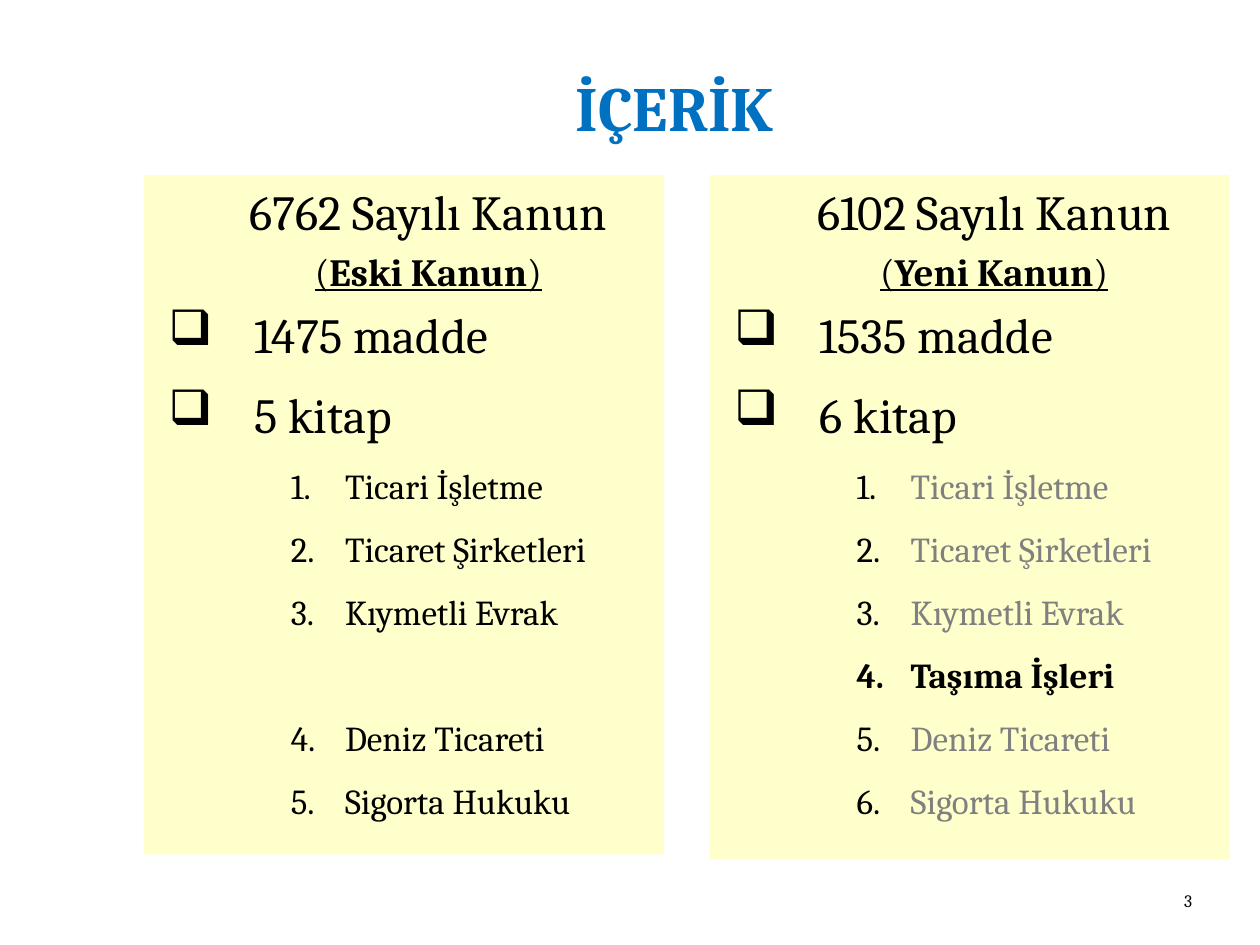
from pptx import Presentation
from pptx.dml.color import RGBColor
from pptx.enum.shapes import MSO_SHAPE as Shape
from pptx.enum.text import MSO_ANCHOR as Anchor, PP_ALIGN as Align
from pptx.oxml import parse_xml
from pptx.oxml.ns import nsdecls
from pptx.util import Inches, Pt

FONT = "Cambria"
COLORS = {"title": "0070C0", "panel": "FFFFCC", "text": "000000", "muted": "808080"}
TITLE = "İÇERİK"
PAGE_NUMBER = "3"
LAWS = [
    {
        "name": "6762 Sayılı Kanun", "status": "Eski Kanun",
        "facts": ["1475 madde", "5 kitap"],
        "books": ["Ticari İşletme", "Ticaret Şirketleri", "Kıymetli Evrak",
                  "Deniz Ticareti", "Sigorta Hukuku"],
        "book_color": "text", "gap_before": "Deniz Ticareti", "height": 5.39,
    },
    {
        "name": "6102 Sayılı Kanun", "status": "Yeni Kanun",
        "facts": ["1535 madde", "6 kitap"],
        "books": ["Ticari İşletme", "Ticaret Şirketleri", "Kıymetli Evrak",
                  "Taşıma İşleri", "Deniz Ticareti", "Sigorta Hukuku"],
        "book_color": "muted", "new_book": "Taşıma İşleri", "height": 5.43,
    },
]
LEFT, TOP, WIDTH, PITCH = 1.14, 1.39, 4.13, 4.49
BOOK_GAP = 36

HEADING = {"margin": 0.38, "indent": 0.01, "align": Align.CENTER}
FACT = {"margin": 0.78, "indent": -0.68, "level": 1, "before": 6, "after": 6,
        "bullet": '<a:buChar {} char="❑"/>'}
BOOK = {"margin": 1.5, "indent": -0.43, "level": 2, "before": 6, "after": 6,
        "bullet": '<a:buAutoNum {} type="arabicPeriod"/>'}


def rgb(name):
    return RGBColor.from_string(COLORS[name])


def add_run(paragraph, text, size, color="text", **styles):
    run = paragraph.add_run()
    run.text = text
    for key, value in {"name": FONT, "size": Pt(size), **styles}.items():
        setattr(run.font, key, value)
    run.font.color.rgb = rgb(color)


def format_paragraph(paragraph, margin, indent, align=Align.LEFT, level=0,
                     before=0, after=0, bullet=None):
    properties = paragraph._p.get_or_add_pPr()
    properties.set("marL", str(Inches(margin)))
    properties.set("indent", str(Inches(indent)))
    if bullet:
        ns = nsdecls("a")
        properties.append(parse_xml(
            f'<a:buClr {ns}><a:srgbClr val="{COLORS["text"]}"/></a:buClr>'))
        properties.append(parse_xml(bullet.format(ns)))
    formats = {"alignment": align, "level": level,
               "space_before": Pt(before), "space_after": Pt(after)}
    for key, value in formats.items():
        setattr(paragraph, key, value)


def add_law(slide, law, left):
    panel = slide.shapes.add_shape(Shape.RECTANGLE, Inches(left), Inches(TOP),
                                   Inches(WIDTH), Inches(law["height"]))
    panel.shadow.inherit = False
    panel.fill.solid()
    panel.fill.fore_color.rgb = rgb("panel")
    panel.line.fill.background()
    frame = panel.text_frame
    frame.word_wrap = True
    frame.vertical_anchor = Anchor.TOP

    name = frame.paragraphs[0]
    format_paragraph(name, **HEADING)
    add_run(name, law["name"], 28)

    status = frame.add_paragraph()
    format_paragraph(status, **HEADING, before=4.4)
    for text, bold in (("(", False), (law["status"], True), (")", False)):
        add_run(status, text, 22, bold=bold, underline=True)

    for fact in law["facts"]:
        paragraph = frame.add_paragraph()
        format_paragraph(paragraph, **FACT)
        add_run(paragraph, fact, 28)

    for book in law["books"]:
        paragraph = frame.add_paragraph()
        gap = BOOK_GAP if book == law.get("gap_before") else 0
        format_paragraph(paragraph, **{**BOOK, "before": BOOK["before"] + gap})
        is_new = book == law.get("new_book")
        add_run(paragraph, book, 20, "text" if is_new else law["book_color"], bold=is_new)


def main():
    deck = Presentation()
    deck.slide_width, deck.slide_height = Inches(10), Inches(7.5)
    slide = deck.slides.add_slide(deck.slide_layouts[5])

    title = slide.shapes.title
    title.left, title.top = Inches(LEFT), Inches(0.25)
    title.width, title.height = Inches(8.43), Inches(0.94)
    title.text_frame.vertical_anchor = Anchor.BOTTOM
    heading = title.text_frame.paragraphs[0]
    heading.alignment = Align.CENTER
    add_run(heading, TITLE, 36, "title", bold=True)

    for column, law in enumerate(LAWS):
        add_law(slide, law, LEFT + column * PITCH)

    footer = slide.shapes.add_textbox(Inches(7.48), Inches(6.9), Inches(2.08), Inches(0.38))
    footer.text_frame.word_wrap = True
    footer.text_frame.vertical_anchor = Anchor.BOTTOM
    number = footer.text_frame.paragraphs[0]
    number.alignment = Align.RIGHT
    add_run(number, PAGE_NUMBER, 10)

    deck.save("out.pptx")


if __name__ == "__main__":
    main()
